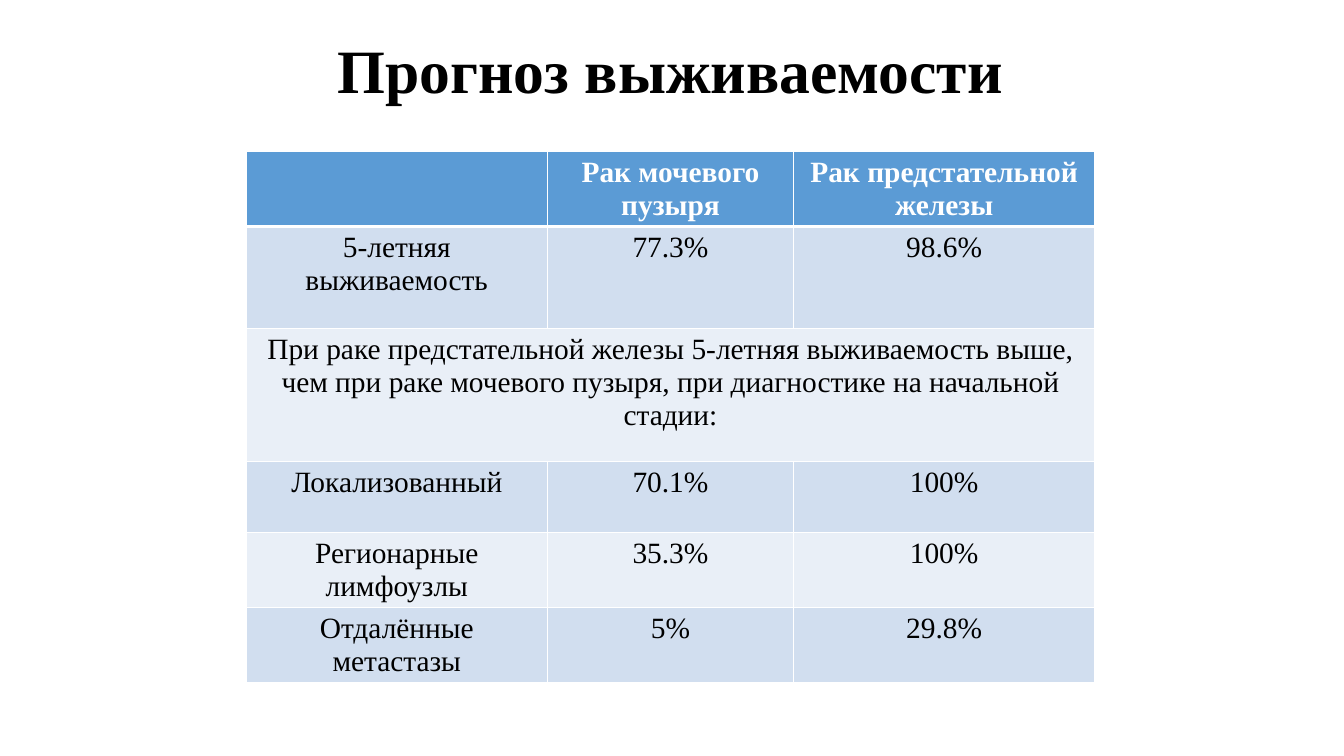
from lxml import etree
from pptx import Presentation
from pptx.dml.color import RGBColor
from pptx.enum.text import MSO_ANCHOR, PP_ALIGN
from pptx.oxml.ns import qn
from pptx.util import Pt

CENTER = PP_ALIGN.CENTER
MIDDLE = MSO_ANCHOR.MIDDLE
FONT = "Times New Roman"
COLORS = {"header": "5B9BD5", "odd": "D1DEEF", "even": "E9EFF7",
          "white": "FFFFFF", "black": "000000"}
COLUMNS = [215.5, 175.5, 215.5]
ROWS = [
    (53, ["", "Рак мочевого пузыря", "Рак предстательной железы"]),
    (73, ["5-летняя выживаемость", "77.3%", "98.6%"]),
    (95, ["При раке предстательной железы 5-летняя выживаемость выше, "
          "чем при раке мочевого пузыря, при диагностике на начальной стадии:"]),
    (50.5, ["Локализованный", "70.1%", "100%"]),
    (50.5, ["Регионарные лимфоузлы", "35.3%", "100%"]),
    (50.5, ["Отдалённые метастазы", "5%", "29.8%"]),
]


def write(tf, text, size=21, color="black", bold=False, spacing=1.0):
    """Put one centred, formatted paragraph into a text frame."""
    p = tf.paragraphs[0]
    p.alignment = CENTER
    p.line_spacing = spacing
    p.font.size = Pt(size)
    if text:
        r = p.add_run()
        r.text = text
        r.font.name = FONT
        r.font.size = Pt(size)
        r.font.bold = bold
        r.font.color.rgb = RGBColor.from_string(COLORS[color])


def add_borders(cell, top=0.96, bottom=0.96):
    """Draw white borders on the four sides of a cell."""
    tcPr = cell._tc.get_or_add_tcPr()
    for side, width in (("L", 0.96), ("R", 0.96), ("T", top), ("B", bottom)):
        ln = etree.SubElement(tcPr, qn(f"a:ln{side}"), w=str(Pt(width)))
        fill = etree.SubElement(ln, qn("a:solidFill"))
        etree.SubElement(fill, qn("a:srgbClr"), val=COLORS["white"])


def add_title(slide, text, left, top, width, height):
    """Place and fill the title placeholder."""
    sp = slide.shapes.title
    sp.left, sp.top, sp.width, sp.height = Pt(left), Pt(top), Pt(width), Pt(height)
    sp.text_frame.vertical_anchor = MIDDLE
    write(sp.text_frame, text, size=44, bold=True, spacing=0.9)


def add_survival_table(slide, left, top):
    """Build the survival table from its top left corner."""
    width, height = sum(COLUMNS), sum(h for h, _ in ROWS)
    table = slide.shapes.add_table(len(ROWS), len(COLUMNS), Pt(left), Pt(top),
                                   Pt(width), Pt(height)).table
    for column, w in zip(table.columns, COLUMNS):
        column.width = Pt(w)
    for i, (h, texts) in enumerate(ROWS):
        table.rows[i].height = Pt(h)
        header = i == 0
        band = "header" if header else "odd" if i % 2 else "even"
        for j in range(len(COLUMNS)):
            cell = table.cell(i, j)
            add_borders(cell, top=3 if i == 1 else 0.96, bottom=3 if header else 0.96)
            cell.fill.solid()
            cell.fill.fore_color.rgb = RGBColor.from_string(COLORS[band])
        if len(texts) == 1:
            table.cell(i, 0).merge(table.cell(i, len(COLUMNS) - 1))
        for j, text in enumerate(texts):
            write(table.cell(i, j).text_frame, text, bold=header,
                  color="white" if header else "black")


def main():
    """Build and save the slide."""
    prs = Presentation()
    prs.slide_width, prs.slide_height = Pt(960), Pt(540)
    slide = prs.slides.add_slide(prs.slide_layouts[5])
    add_title(slide, "Прогноз выживаемости", 65, 0, 828, 104.4)
    add_survival_table(slide, 175.7, 108)
    prs.save("out.pptx")


if __name__ == "__main__":
    main()
